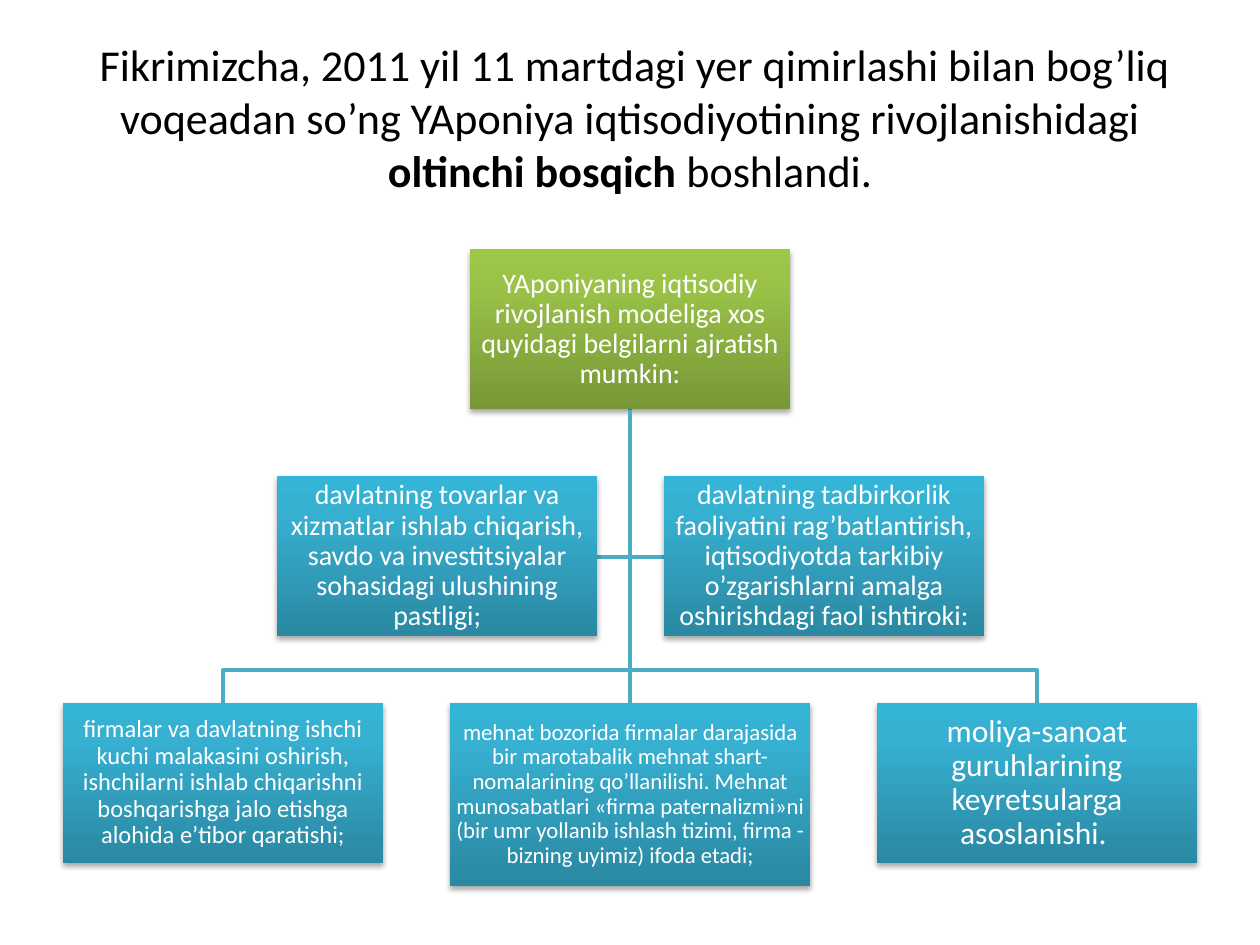
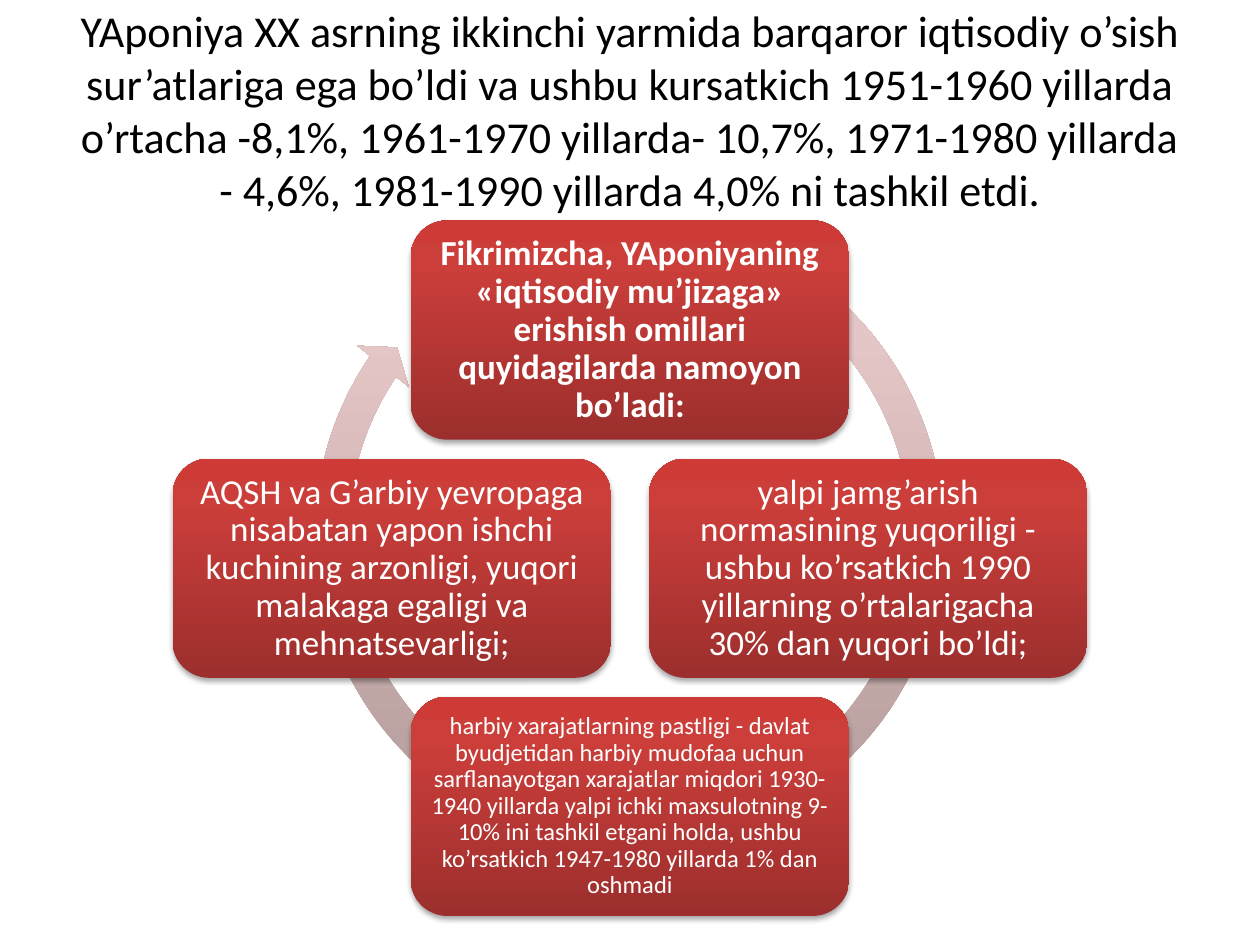
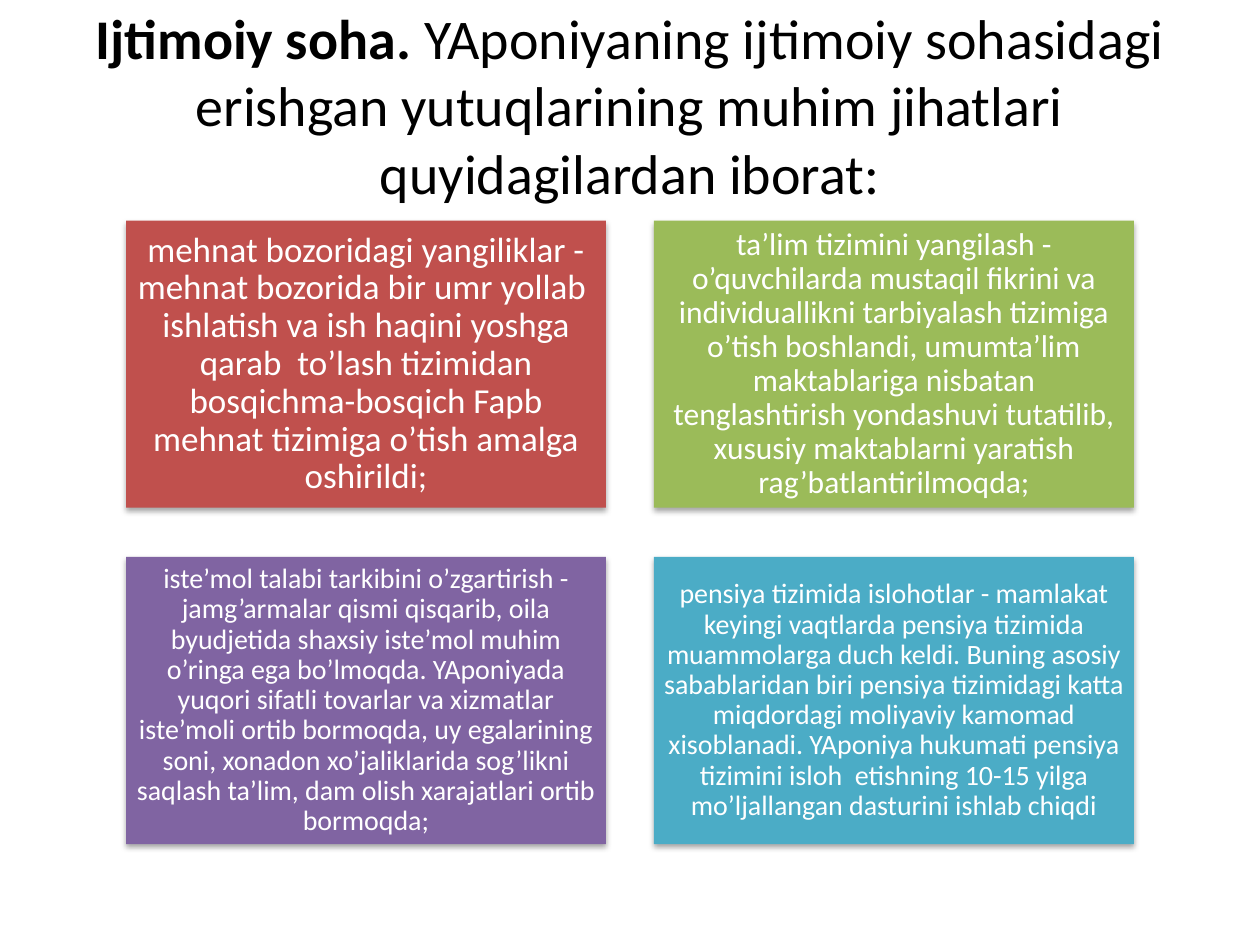
from copy import deepcopy
from dataclasses import dataclass

from lxml.etree import SubElement
from pptx import Presentation
from pptx.dml.color import RGBColor
from pptx.enum.shapes import MSO_CONNECTOR as Line, MSO_SHAPE as Preset
from pptx.enum.text import MSO_ANCHOR as Anchor, MSO_AUTO_SIZE as AutoSize, PP_ALIGN as Align
from pptx.oxml.ns import qn
from pptx.util import Inches, Pt

FONT = "Calibri"
BLACK = "000000"
WHITE = "FFFFFF"
TEAL = "4BACC6"
GREEN_FADE = ("779737", "9BC348", "9DC746")
TEAL_FADE = ("2A88A2", "37B1D2", "34B4D6")
RED_FADE = ("9C2F2D", "CB3E3A", "CE3B37")
PALE_RED_FADE = ("B09998", "E5C6C6", "E6C7C6")
FADE_POSITIONS = (0, 0.8, 1)
TITLE_ONLY = 5

Fill = str | tuple[str, ...]
Runs = list[tuple[str, bool]]
Point = tuple[float, float]


@dataclass
class Card:
    text: str
    left: float
    top: float
    fill: Fill
    font_size: float
    width: float
    height: float
    margin: float = 0.08
    bold: bool = False
    preset: Preset = Preset.RECTANGLE


def rgb(value: str) -> RGBColor:
    return RGBColor.from_string(value)


def write_text(frame, runs: Runs, *, size: float, color: str = WHITE,
               margin: float = 0.08, spacing: float | None = None) -> None:
    frame.word_wrap = True
    frame.auto_size = AutoSize.NONE
    frame.vertical_anchor = Anchor.MIDDLE
    frame.margin_left = frame.margin_right = Inches(margin)
    frame.margin_top = frame.margin_bottom = Inches(margin)
    paragraph = frame.paragraphs[0]
    paragraph.alignment = Align.CENTER
    if spacing:
        paragraph.line_spacing = spacing
    for text, bold in runs:
        run = paragraph.add_run()
        run.text = text
        run.font.name = FONT
        run.font.size = Pt(size)
        run.font.bold = bold
        run.font.color.rgb = rgb(color)


def paint(shape, fill: Fill) -> None:
    shape.line.fill.background()
    shape.shadow.inherit = False
    if isinstance(fill, str):
        shape.fill.solid()
        shape.fill.fore_color.rgb = rgb(fill)
        return
    shape.fill.gradient()
    shape.fill.gradient_angle = 90
    stop_list = shape.element.spPr.find(".//" + qn("a:gsLst"))
    stop_list.append(deepcopy(stop_list[-1]))
    for stop, color, position in zip(shape.fill.gradient_stops, fill, FADE_POSITIONS):
        stop.color.rgb = rgb(color)
        stop.position = position


def add_soft_shadow(shape) -> None:
    effects = shape.element.spPr.find(qn("a:effectLst"))
    shadow = SubElement(effects, qn("a:outerShdw"), blurRad=str(Pt(3.1)),
                        dist=str(Pt(1.8)), dir="5400000", rotWithShape="0")
    color = SubElement(shadow, qn("a:srgbClr"), val=BLACK)
    SubElement(color, qn("a:alpha"), val="35000")


def add_card(slide, card: Card):
    shape = slide.shapes.add_shape(card.preset, Inches(card.left), Inches(card.top),
                                   Inches(card.width), Inches(card.height))
    paint(shape, card.fill)
    add_soft_shadow(shape)
    write_text(shape.text_frame, [(card.text, card.bold)], size=card.font_size,
               margin=card.margin, spacing=0.9)
    return shape


def draw_branch_line(branch) -> None:
    branch.line.color.rgb = rgb(TEAL)
    branch.line.width = Pt(2)


def add_bent_branch(slide, points: list[Point]) -> None:
    start, *bends = [(Inches(x), Inches(y)) for x, y in points]
    outline = slide.shapes.build_freeform(*start)
    outline.add_line_segments(bends, close=False)
    branch = outline.convert_to_shape()
    branch.fill.background()
    branch.shadow.inherit = False
    draw_branch_line(branch)


def add_trunk(slide, parent, child) -> None:
    trunk = slide.shapes.add_connector(Line.STRAIGHT, 0, 0, 0, 0)
    trunk.begin_connect(parent, 2)
    trunk.end_connect(child, 0)
    draw_branch_line(trunk)
    SubElement(trunk.element.spPr, qn("a:effectLst"))


def add_titled_slide(deck, runs: Runs, *, top: float, height: float, size: float):
    slide = deck.slides.add_slide(deck.slide_layouts[TITLE_ONLY])
    title = slide.shapes.title
    title.left, title.top = Inches(0.5), Inches(top)
    title.width, title.height = Inches(9), Inches(height)
    write_text(title.text_frame, runs, size=size, color=BLACK, margin=0.1)
    return slide


def build_model_slide(deck) -> None:
    slide = add_titled_slide(deck, [
        (" Fikrimizcha, 2011 yil 11 martdagi yer qimirlashi bilan bog’liq voqeadan so’ng "
         "YAponiya iqtisodiyotining rivojlanishidagi ", False),
        ("oltinchi bosqich ", True),
        ("boshlandi.", False),
    ], top=0.3, height=1.25, size=25.2)

    root_x, root_y, state_y, fork_y, bottom_y = 5, 3.25, 4.42, 5.32, 5.58
    for side in (1, -1):
        add_bent_branch(slide, [(root_x, root_y), (root_x, state_y),
                                (root_x + side * 0.27, state_y)])
        outer_x = root_x + side * 3.23
        add_bent_branch(slide, [(root_x, root_y), (root_x, fork_y),
                                (outer_x, fork_y), (outer_x, bottom_y)])

    def add_node(text: str, left: float, top: float, font_size: float,
                 fill: Fill = TEAL_FADE, width: float = 2.54, height: float = 1.27):
        return add_card(slide, Card(text, left, top, fill, font_size, width, height, margin=0.01))

    model = add_node("YAponiyaning iqtisodiy rivojlanish modeliga xos quyidagi belgilarni "
                     "ajratish mumkin:", 3.73, 1.98, 16, fill=GREEN_FADE)
    add_node("firmalar va davlatning ishchi kuchi malakasini oshirish, ishchilarni ishlab "
             "chiqarishni boshqarishga jalo etishga alohida e’tibor qaratishi;",
             0.5, bottom_y, 14)
    contracts = add_node("mehnat bozorida firmalar darajasida bir marotabalik mehnat "
                         "shart-nomalarining qo’llanilishi. Mehnat munosabatlari «firma "
                         "paternalizmi»ni (bir umr yollanib ishlash tizimi, firma - bizning "
                         "uyimiz) ifoda etadi;", 3.57, bottom_y, 13, width=2.86, height=1.45)
    add_node("moliya-sanoat guruhlarining keyretsularga asoslanishi. ", 6.96, bottom_y, 18)
    add_node("davlatning tovarlar va xizmatlar ishlab chiqarish, savdo va investitsiyalar "
             "sohasidagi ulushining pastligi;", 2.2, 3.78, 16)
    add_node("davlatning tadbirkorlik faoliyatini rag’batlantirish, iqtisodiyotda tarkibiy "
             "o’zgarishlarni amalga oshirishdagi faol ishtiroki:", 5.27, 3.78, 16)
    add_trunk(slide, model, contracts)


def build_factors_slide(deck) -> None:
    slide = add_titled_slide(deck, [
        ("YAponiya XX asrning ikkinchi yarmida barqaror iqtisodiy o’sish sur’atlariga ega bo’ldi "
         "va ushbu kursatkich 1951-1960 yillarda o’rtacha -8,1%, 1961-1970 yillarda- 10,7%, "
         "1971-1980 yillarda - 4,6%, 1981-1990 yillarda 4,0% ni tashkil etdi.", False),
    ], top=0.04, height=1.66, size=25.2)

    cycle = slide.shapes.add_shape(Preset.CIRCULAR_ARROW, Inches(2.37), Inches(1.61),
                                   Inches(5.25), Inches(5.25))
    for index, value in enumerate((0.05, 2.73, 128.5, 180.18, 0.05)):
        cycle.adjustments[index] = value
    paint(cycle, PALE_RED_FADE)

    center_left, center_top, radius = 3.26, 3.64, 1.89
    factors = [
        (0, -1, 20, "Fikrimizcha, YAponiyaning «iqtisodiy mu’jizaga» erishish omillari "
                    "quyidagilarda namoyon bo’ladi:"),
        (1, 0, 20, "yalpi jamg’arish normasining yuqoriligi - ushbu ko’rsatkich 1990 yillarning "
                   "o’rtalarigacha 30% dan yuqori bo’ldi;"),
        (0, 1, 14, "harbiy xarajatlarning pastligi - davlat byudjetidan harbiy mudofaa uchun "
                   "sarflanayotgan xarajatlar miqdori 1930-1940 yillarda yalpi ichki "
                   "maxsulotning 9-10% ini tashkil etgani holda, ushbu ko’rsatkich 1947-1980 "
                   "yillarda 1% dan oshmadi"),
        (-1, 0, 20, "AQSH va G’arbiy yevropaga nisabatan yapon ishchi kuchining arzonligi, yuqori "
                    "malakaga egaligi va mehnatsevarligi;"),
    ]
    for across, down, font_size, text in factors:
        add_card(slide, Card(text, center_left + across * radius, center_top + down * radius,
                             RED_FADE, font_size, 3.48, 1.74,
                             margin=0.06 if font_size < 20 else 0.08,
                             bold=down < 0, preset=Preset.ROUNDED_RECTANGLE))


def build_social_slide(deck) -> None:
    slide = add_titled_slide(deck, [
        ("Ijtimoiy soha. ", True),
        ("YAponiyaning ijtimoiy sohasidagi erishgan yutuqlarining muhim jihatlari "
         "quyidagilardan iborat:", False),
    ], top=0.02, height=1.62, size=32)

    achievements = [
        ("C0504D", 20, 0.08,
         "mehnat bozoridagi yangiliklar - mehnat bozorida bir umr yollab  ishlatish va ish haqini "
         "yoshga qarab  to’lash tizimidan bosqichma-bosqich Fapb mehnat tizimiga o’tish amalga "
         "oshirildi;"),
        ("9BBB59", 18, 0.08,
         "ta’lim tizimini yangilash - o’quvchilarda mustaqil fikrini va individuallikni "
         "tarbiyalash tizimiga o’tish boshlandi, umumta’lim maktablariga nisbatan "
         "tenglashtirish yondashuvi tutatilib, xususiy maktablarni yaratish "
         "rag’batlantirilmoqda;"),
        ("8064A2", 16, 0.07,
         "iste’mol talabi tarkibini o’zgartirish - jamg’armalar qismi qisqarib, oila byudjetida "
         "shaxsiy iste’mol muhim o’ringa ega bo’lmoqda. YAponiyada yuqori sifatli tovarlar va "
         "xizmatlar iste’moli ortib bormoqda, uy egalarining soni, xonadon xo’jaliklarida "
         "sog’likni saqlash ta’lim, dam olish xarajatlari ortib bormoqda;"),
        (TEAL, 16, 0.07,
         "pensiya tizimida islohotlar - mamlakat keyingi vaqtlarda pensiya tizimida muammolarga "
         "duch keldi. Buning asosiy sabablaridan biri pensiya tizimidagi katta miqdordagi "
         "moliyaviy kamomad xisoblanadi. YAponiya hukumati pensiya tizimini isloh  etishning "
         "10-15 yilga mo’ljallangan dasturini ishlab chiqdi"),
    ]
    for index, (fill, font_size, margin, text) in enumerate(achievements):
        row, column = divmod(index, 2)
        add_card(slide, Card(text, 1 + column * 4.19, 1.75 + row * 2.67, fill, font_size,
                             3.81, 2.28, margin=margin))


def main() -> None:
    deck = Presentation()
    deck.slide_width, deck.slide_height = Inches(10), Inches(7.5)
    build_model_slide(deck)
    build_factors_slide(deck)
    build_social_slide(deck)
    deck.save("out.pptx")


if __name__ == "__main__":
    main()
